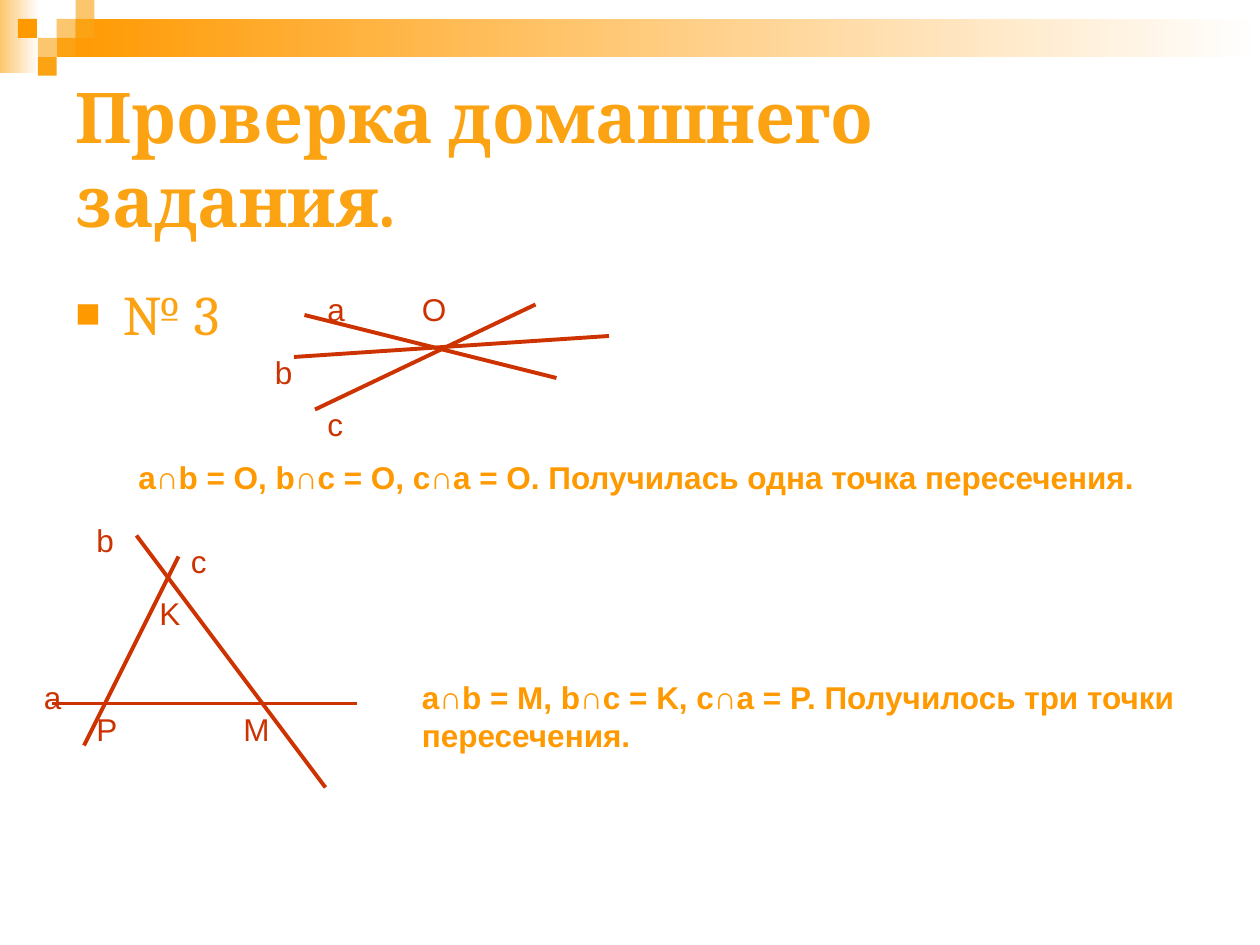
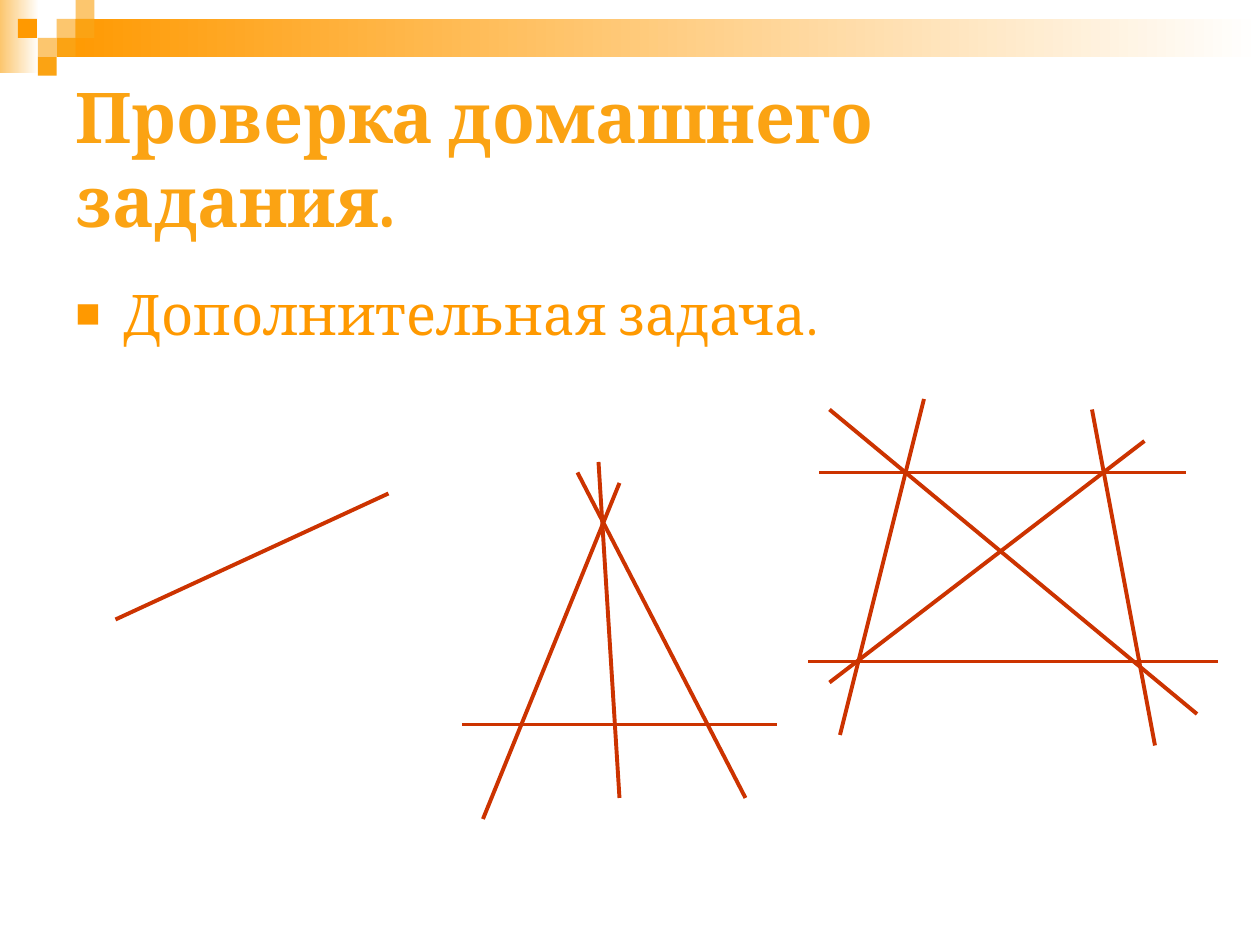
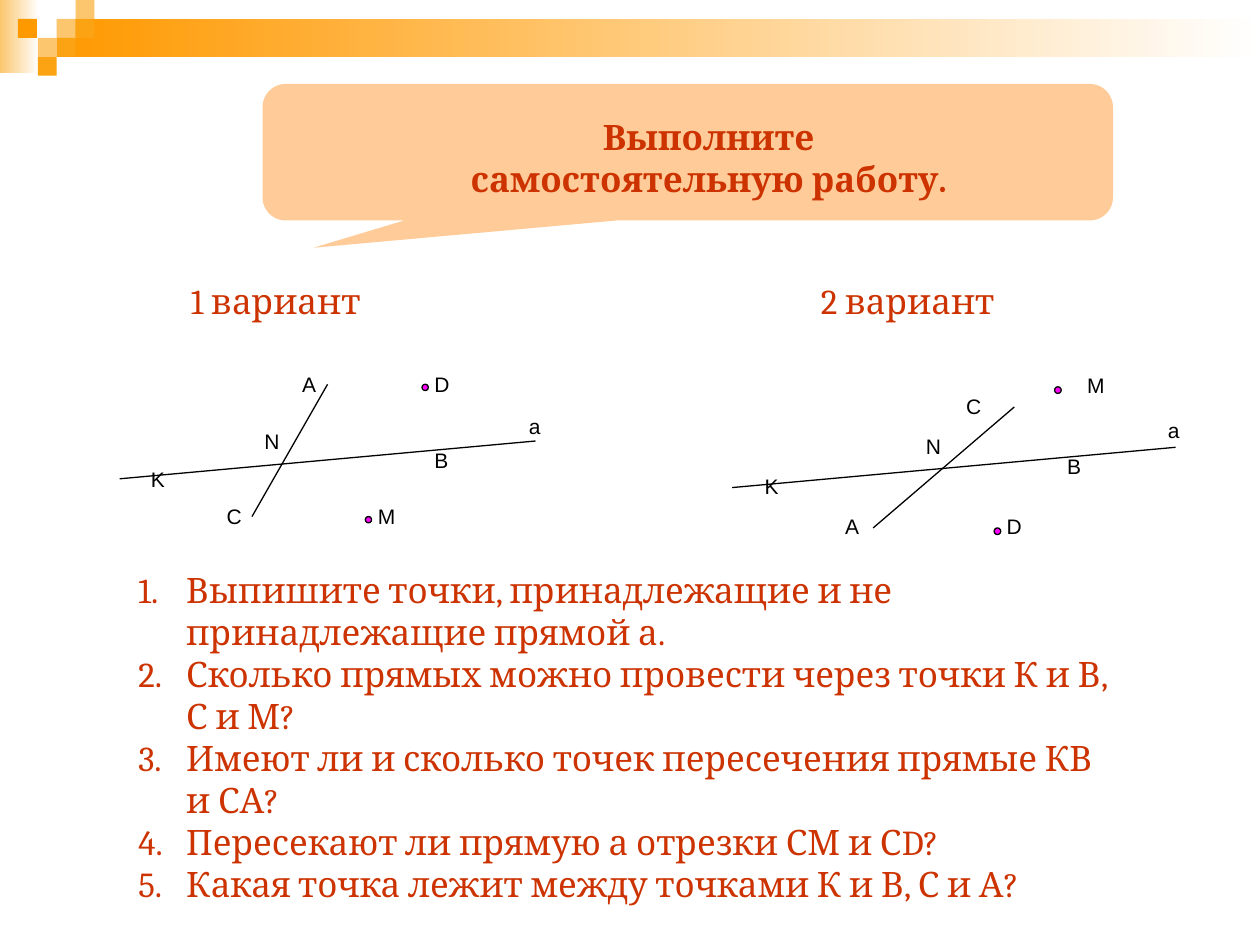
from dataclasses import dataclass

from lxml import etree
from pptx import Presentation, util as u
from pptx.dml.color import RGBColor
from pptx.enum import shapes, text as t
from pptx.oxml.ns import qn


@dataclass(frozen=True)
class Theme:
    gold: str = "FF9900"
    amber: str = "FBA313"
    sand: str = "FCC66E"
    peach: str = "FFCC99"
    rust: str = "CC3300"
    pink: str = "FF00FF"
    black: str = "000000"
    white: str = "FFFFFF"
    serif: str = "Cambria"
    sans: str = "Arial"
    head: int = 40
    body: int = 32
    task: int = 20
    note: int = 18
    mark: int = 12


T = Theme()
WIDE, HIGH = 10, 7.5
CELL = WIDE / 120   # the page is a grid of 120 columns and 90 rows
TILE = 0.15         # side of a square in the corner ornament
HANG = 0.38
BOX = shapes.MSO_SHAPE
MID, LOW = t.MSO_ANCHOR.MIDDLE, t.MSO_ANCHOR.BOTTOM


def rgb(code):
    return RGBColor.from_string(code)


def cells(*nums, unit=CELL, left=0, top=0):
    """Turn alternating columns and rows into lengths from an origin."""
    return [u.Inches(n * unit + (left, top, 0, 0)[i])
            for i, n in enumerate(nums)]


def shape(slide, kind, area, fill, fade=None, edge=None):
    item = slide.shapes.add_shape(kind, *area)
    item.shadow.inherit = False
    if fade:
        item.fill.gradient()
        item.fill.gradient_angle = 0
        for stop, code in zip(item.fill.gradient_stops, (fill, fade)):
            stop.color.rgb = rgb(code)
    else:
        item.fill.solid()
        item.fill.fore_color.rgb = rgb(fill)
    if edge:
        item.line.color.rgb = rgb(edge)
        item.line.width = u.Pt(0.75)
    else:
        item.line.fill.background()
    return item


def line(slide, start, end, color=T.rust, width=2.25):
    item = slide.shapes.add_connector(
        shapes.MSO_CONNECTOR.STRAIGHT, *start, *end)
    item.line.color.rgb = rgb(color)
    item.line.width = u.Pt(width)
    etree.SubElement(item.element.spPr, qn("a:effectLst"))


def bullet(para, mark):
    """Hang a square or a running number in front of the paragraph."""
    props = para._p.get_or_add_pPr()
    props.set("marL", str(u.Inches(HANG)))
    props.set("indent", str(-u.Inches(HANG)))
    if mark == "number":
        etree.SubElement(props, qn("a:buAutoNum"), type="arabicPeriod")
        return
    tint = etree.SubElement(props, qn("a:buClr"))
    etree.SubElement(tint, qn("a:srgbClr"), val=T.gold)
    etree.SubElement(props, qn("a:buSzPct"), val="75000")
    etree.SubElement(props, qn("a:buFont"), typeface=T.sans)
    etree.SubElement(props, qn("a:buChar"), char=mark)


def text(slide, area, *paras, size=T.note, font=T.sans, color=T.rust,
         bold=False, anchor=t.MSO_ANCHOR.TOP, align=t.PP_ALIGN.LEFT,
         mark=None):
    frame = slide.shapes.add_textbox(*area).text_frame
    frame.word_wrap = True
    frame.vertical_anchor = anchor
    for i, words in enumerate(paras):
        para = frame.add_paragraph() if i else frame.paragraphs[0]
        para.text = words
        para.alignment = align
        for run in para.runs:
            run.font.size = u.Pt(size)
            run.font.name = font
            run.font.bold = bold
            run.font.color.rgb = rgb(color)
        if mark:
            bullet(para, mark)


def band(deck, slide):
    """Draw the top band and its tiles, then hand them to the master."""
    def tile(col, row, color):
        return shape(slide, BOX.RECTANGLE,
                     cells(col, row, 1, 1, unit=TILE), color)

    parts = [
        shape(slide, BOX.RECTANGLE, cells(0, 0, 0.31, 0.58, unit=1),
              T.sand, fade=T.white),
        shape(slide, BOX.RECTANGLE, cells(0.45, 0.15, 9.55, 0.3, unit=1),
              T.gold, fade=T.white),
    ]
    parts += [tile(*spot) for spot in (
        (3, 1, T.sand), (4, 0, T.sand), (4, 1, T.amber), (2, 2, T.sand),
        (0.95, 1, T.gold), (3, 2, T.amber), (2, 3, T.amber))]
    tree = deck.slide_master.shapes.element
    for i, part in enumerate(parts):
        part.element.xpath(".//p:cNvPr")[0].set("id", str(100 + i))
        tree.insert(2 + i, part.element)


def heading(slide, topic, color):
    text(slide, cells(6, 6, 108, 18), "Проверка домашнего задания.",
         size=T.head, font=T.serif, color=T.amber, bold=True, anchor=MID)
    text(slide, cells(6, 26, 108, 51), topic, size=T.body, font=T.serif,
         color=color, mark="■")


def figure(slide, lines, names=()):
    for x1, y1, x2, y2 in lines:
        line(slide, cells(x1, y1), cells(x2, y2))
    for name, col, row in names:
        text(slide, cells(col, row, 5, 4.8), name)


def variant(slide, left, top, unit, lines, names):
    """Draw a sketch of line а, a crossing segment and two loose points."""
    def spot(*nums):
        return cells(*nums, unit=unit, left=left, top=top)

    for x1, y1, x2, y2 in ((0, 6, 22, 4), *lines):
        line(slide, spot(x1, y1), spot(x2, y2), T.black, 0.75)
    for col, row in ((16, 1), (13, 8)):
        shape(slide, BOX.OVAL, spot(col, row, 0.33, 0.33), T.pink,
              edge=T.black)
    shared = (("K", 1, 5), ("B", 16, 4), ("а", 21, 2.2))
    for name, col, row in (*names, *shared):
        text(slide, spot(col, row, 2, 2), name, size=T.mark, color=T.black)


def homework(slide):
    heading(slide, "№ 3", T.amber)
    figure(slide,
           ((29, 30, 53, 36), (30, 39, 51, 29), (28, 34, 58, 32)),
           (("О", 39, 27), ("a", 30, 27), ("b", 25, 33), ("c", 30, 38)))
    text(slide, cells(12, 43, 101, 4.8),
         "a∩b = O, b∩c = O, c∩a = O. Получилась одна точка пересечения.",
         color=T.gold, bold=True)
    figure(slide,
           ((17, 53, 8, 71), (5, 67, 34, 67), (13, 51, 31, 75)),
           (("c", 17, 51), ("b", 8, 49), ("a", 3, 64), ("P", 8, 67),
            ("M", 22, 67), ("K", 14, 56)))
    text(slide, cells(39, 64, 76, 8.4),
         "a∩b = M, b∩c = K, c∩a = P. Получилось три точки",
         "пересечения.", color=T.gold, bold=True)


def extra(slide):
    heading(slide, "Дополнительная задача.", T.gold)
    single = ((11, 59, 37, 47),)
    fan = ((44, 69, 74, 69), (59, 46, 46, 78), (57, 44, 59, 76),
           (55, 45, 71, 76))
    quad = ((78, 45, 113, 45), (77, 63, 116, 63), (88, 38, 80, 70),
            (104, 39, 110, 71), (79, 39, 114, 68), (79, 65, 109, 42))
    for lines in (single, fan, quad):
        figure(slide, lines)


def solo(slide):
    bubble = shape(slide, BOX.ROUNDED_RECTANGULAR_CALLOUT,
                   cells(25, 8, 81, 13), T.peach)
    for i, value in enumerate((-0.44, 0.7, 0.17)):
        bubble.adjustments[i] = value
    text(slide, cells(38, 10, 59, 10),
         "Выполните\vсамостоятельную работу.", size=T.task, font=T.serif,
         bold=True, anchor=MID, align=t.PP_ALIGN.CENTER)
    variant(slide, 0.95, 2.9, 0.15, ((11, 1, 7, 8),),
            (("N", 7, 3), ("C", 5, 7), ("A", 9, 0), ("D", 16, 0),
             ("M", 13, 7)))
    variant(slide, 5.81, 2.91, 0.16, ((14, 2, 7, 8),),
            (("N", 9, 3), ("C", 11, 1), ("A", 5, 7), ("D", 13, 7),
             ("M", 17, 0)))
    for i, col in enumerate((17, 77), 1):
        text(slide, cells(col, 26, 25, 5.2), f"{i} вариант",
             size=T.task, font=T.serif)
    text(slide, cells(12, 49.5, 96, 37.2),
         "Выпишите точки, принадлежащие и не принадлежащие прямой а.",
         "Сколько прямых можно провести через точки К и В, С и М?",
         "Имеют ли и сколько точек пересечения прямые КВ и СА?",
         "Пересекают ли прямую а отрезки СМ и СD?",
         "Какая точка лежит между точками К и В, С и А?",
         size=T.task, font=T.serif, anchor=LOW, mark="number")


def main():
    deck = Presentation()
    deck.slide_width, deck.slide_height = u.Inches(WIDE), u.Inches(HIGH)
    blank = deck.slide_layouts[6]
    for i, fill in enumerate((homework, extra, solo)):
        slide = deck.slides.add_slide(blank)
        if i == 0:
            band(deck, slide)
        fill(slide)
    deck.save("out.pptx")


if __name__ == "__main__":
    main()
